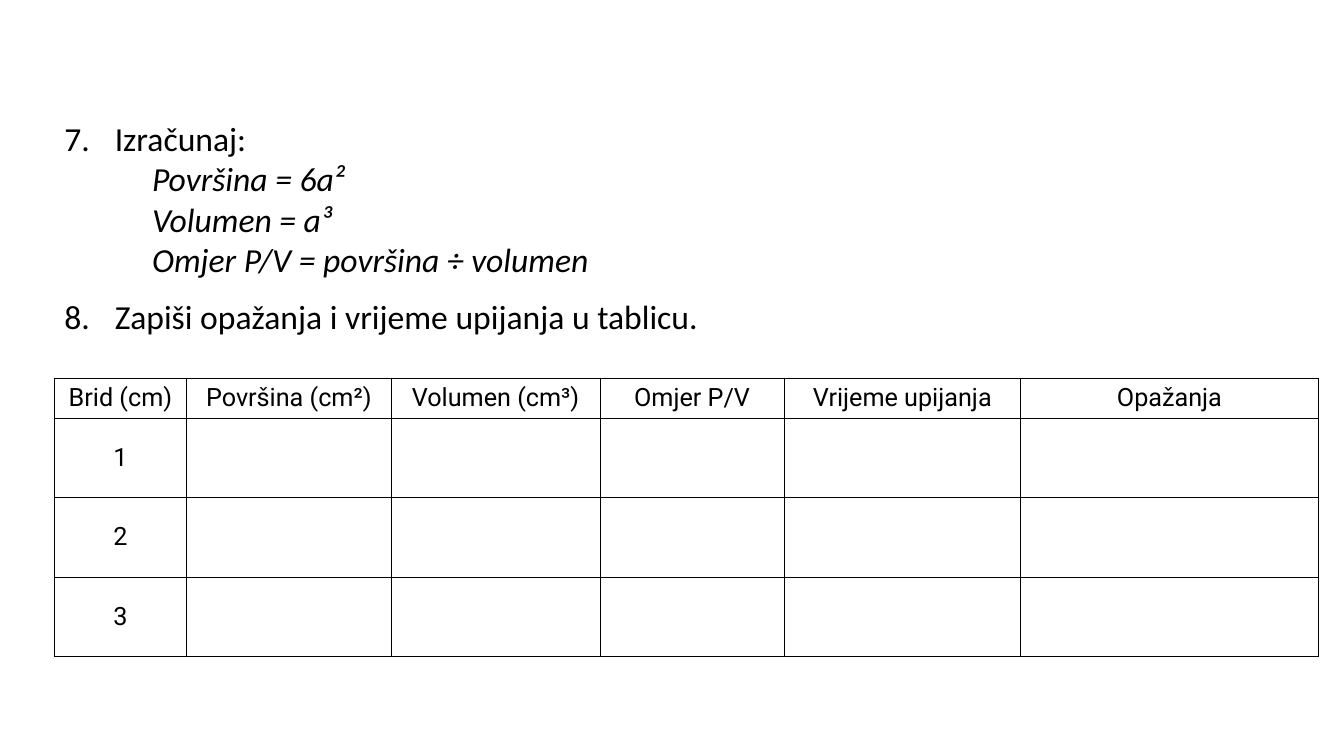
from lxml import etree
from pptx import Presentation
from pptx.dml.color import RGBColor
from pptx.enum.text import MSO_ANCHOR, MSO_AUTO_SIZE, PP_ALIGN
from pptx.oxml import parse_xml
from pptx.oxml.ns import nsdecls, qn
from pptx.util import Inches, Pt

BLACK = RGBColor(0x00, 0x00, 0x00)
WHITE = RGBColor(0xFF, 0xFF, 0xFF)

# Grid units: one column or row is 1 % of the slide's width or height.
LEFT = 4.05
COLUMN_SHARES = [9.83, 15.23, 15.53, 13.73, 17.55, 22.2]
HEADER_SHARE, ENTRY_SHARE = 5.2, 10.53

HEADERS = ["Brid (cm)", "Površina (cm²)", "Volumen (cm³)",
           "Omjer P/V", "Vrijeme upijanja", "Opažanja"]
EDGES = ["1", "2", "3"]
FORMULAS = ["Površina = 6a²", "Volumen = a³", "Omjer P/V = površina ÷ volumen"]


class Worksheet:
    """Holds the slide, its grid and the text and line styles."""
    text_font, text_size = "Calibri", Pt(24)
    table_font, table_size = "Roboto", Pt(18)
    border = Pt(0.25)
    hanging = Inches(0.5)
    formula_indent = Inches(0.87)

    def __init__(self, prs):
        self.prs = prs
        self.slide = prs.slides.add_slide(prs.slide_layouts[6])
        fill = self.slide.background.fill
        fill.solid()
        fill.fore_color.rgb = WHITE

    def x(self, columns):
        return round(self.prs.slide_width * columns / 100)

    def y(self, rows):
        return round(self.prs.slide_height * rows / 100)

    def add_run(self, p, text, font, size, italic=False):
        r = p.add_run()
        r.text = text
        r.font.name, r.font.size = font, size
        r.font.italic = italic
        r.font.color.rgb = BLACK

    def steps(self, left, top, width, height, lines):
        """Lines are (text, number, space after); number None is a formula."""
        sp = self.slide.shapes.add_textbox(
            self.x(left), self.y(top), self.x(width), self.y(height))
        tf = sp.text_frame
        tf.word_wrap = True
        tf.auto_size = MSO_AUTO_SIZE.SHAPE_TO_FIT_TEXT
        for i, (text, number, after) in enumerate(lines):
            p = tf.add_paragraph() if i else tf.paragraphs[0]
            p.space_after = Pt(after)
            pPr = p._p.get_or_add_pPr()
            if number is None:
                pPr.set("marL", str(self.formula_indent))
                pPr.set("indent", "0")
            else:
                pPr.set("marL", str(self.hanging))
                pPr.set("indent", str(-self.hanging))
                etree.SubElement(pPr, qn("a:buFont"), typeface="+mj-lt")
                etree.SubElement(pPr, qn("a:buAutoNum"),
                                 type="arabicPeriod", startAt=str(number))
            self.add_run(p, text, self.text_font, self.text_size, number is None)

    def cell(self, cell, text):
        cell.fill.background()
        cell.vertical_anchor = MSO_ANCHOR.MIDDLE
        p = cell.text_frame.paragraphs[0]
        p.alignment = PP_ALIGN.CENTER
        if text:
            self.add_run(p, text, self.table_font, self.table_size)
        tcPr = cell._tc.get_or_add_tcPr()
        for i, side in enumerate(("lnL", "lnR", "lnT", "lnB")):
            tcPr.insert(i, parse_xml(
                f'<a:{side} {nsdecls("a")} w="{self.border}"><a:solidFill>'
                f'<a:srgbClr val="{BLACK}"/></a:solidFill></a:{side}>'))

    def table(self, left, top, column_shares, row_shares, rows):
        table = self.slide.shapes.add_table(
            len(rows), len(column_shares), self.x(left), self.y(top),
            self.x(sum(column_shares)), self.y(sum(row_shares))).table
        table.first_row = table.horz_banding = False
        for column, share in zip(table.columns, column_shares):
            column.width = self.x(share)
        for row, share, texts in zip(table.rows, row_shares, rows):
            row.height = self.y(share)
            for cell, text in zip(row.cells, texts):
                self.cell(cell, text)
        return table


def main():
    prs = Presentation()
    prs.slide_width, prs.slide_height = Inches(13.33), Inches(7.5)
    sheet = Worksheet(prs)

    blanks = [""] * (len(HEADERS) - 1)
    table = sheet.table(LEFT, 50, COLUMN_SHARES,
                        [HEADER_SHARE] + [ENTRY_SHARE] * len(EDGES),
                        [HEADERS] + [[edge] + blanks for edge in EDGES])
    last_fill = table.cell(len(EDGES), len(blanks)).fill
    last_fill.solid()
    last_fill.fore_color.rgb = WHITE

    *first_formulas, ratio = FORMULAS
    sheet.steps(LEFT, 14.93, 50, 30.5, [
        ("Izračunaj:", 7, 0),
        *((formula, None, 0) for formula in first_formulas),
        (ratio, None, 12),
        ("Zapiši opažanja i vrijeme upijanja u tablicu.", 8, 12),
    ])
    prs.save("out.pptx")


if __name__ == "__main__":
    main()
